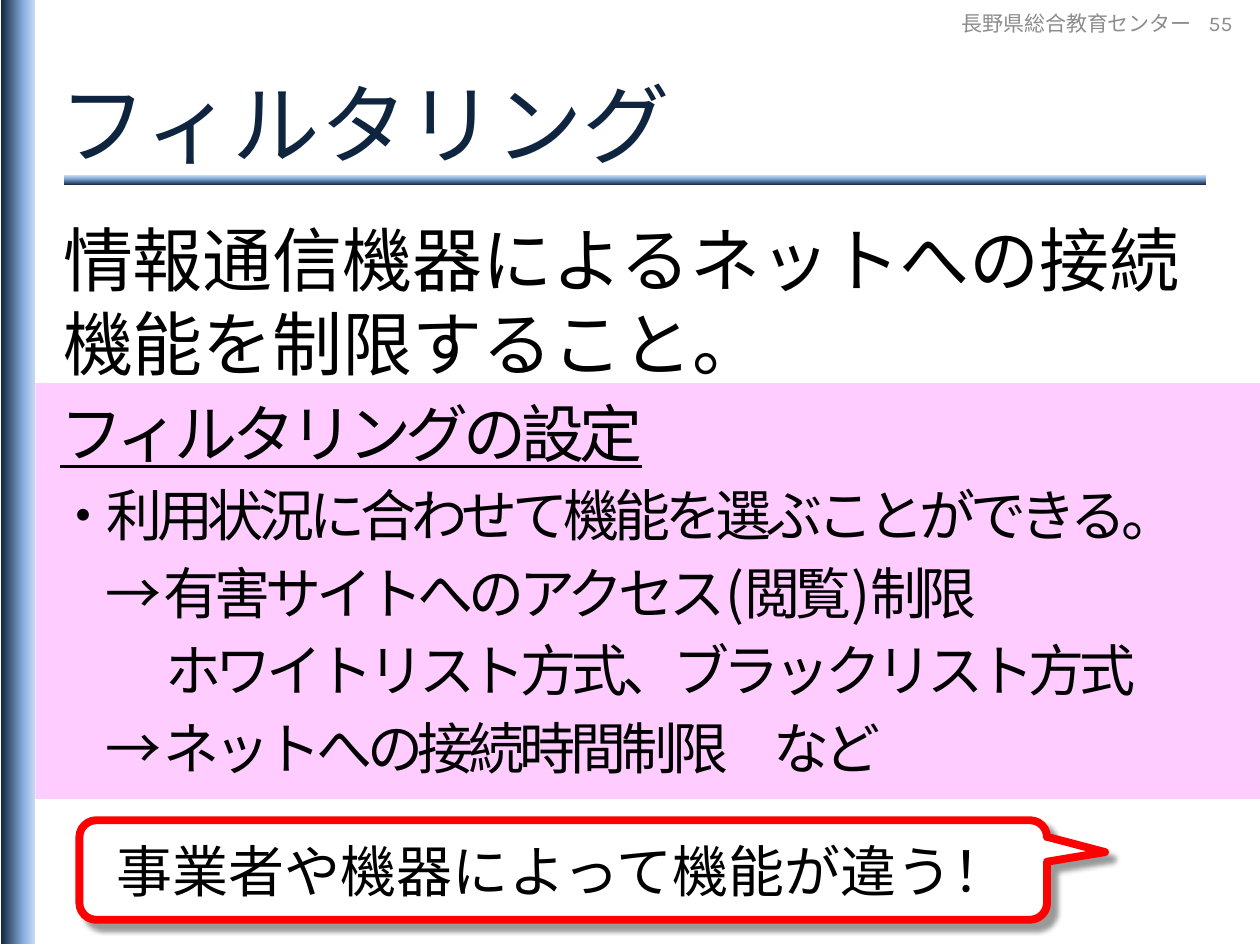
from lxml import etree
from pptx import Presentation
from pptx.dml.color import RGBColor
from pptx.enum.shapes import MSO_SHAPE
from pptx.enum.text import MSO_ANCHOR, MSO_AUTO_SIZE, PP_ALIGN
from pptx.oxml import parse_xml
from pptx.oxml.ns import qn
from pptx.util import Inches, Pt

RECT = MSO_SHAPE.RECTANGLE
CALLOUT = MSO_SHAPE.ROUNDED_RECTANGULAR_CALLOUT
TOP, MIDDLE, BOTTOM = MSO_ANCHOR.TOP, MSO_ANCHOR.MIDDLE, MSO_ANCHOR.BOTTOM
LEFT, CENTER, RIGHT = PP_ALIGN.LEFT, PP_ALIGN.CENTER, PP_ALIGN.RIGHT

NAVY = RGBColor(0x0F, 0x24, 0x3E)
GREY = RGBColor(0x8C, 0x8C, 0x8C)
BLACK = RGBColor(0, 0, 0)
WHITE = RGBColor(255, 255, 255)
PINK = RGBColor(0xFF, 0xCC, 0xFF)
RED = RGBColor(255, 0, 0)
NOTO = "Noto Sans CJK JP"
NS = 'xmlns:a="http://schemas.openxmlformats.org/drawingml/2006/main"'

TITLE = "フィルタリング"
HEADS = [
    ("55", (9.41, 0, 0.47, 0.36), RIGHT, 0.1),
    ("長野県総合教育センター", (7.52, 0, 2.05, 0.36), CENTER, 0),
]
INTRO = ["情報通信機器によるネットへの接続", "機能を制限すること。"]
POINTS = [
    ("フィルタリングの設定", 36, 0.2),
    ("・利用状況に合わせて機能を選ぶことができる。", 32, 0.16),
    ("→ 有害サイトへのアクセス(閲覧)制限", 32, 0.56),
    ("ホワイトリスト方式、ブラックリスト方式", 32, 1.03),
    ("→ ネットへの接続時間制限　など", 32, 0.56),
]
NOTE = "事業者や機器によって機能が違う！"
BARS = [((0.51, 1.39, 9.06, 0.08), 0), ((-3.61, 3.61, 7.5, 0.27), 90)]
STOPS = [(0, "0F243E"), (70, "8EB4E3"), (100, "C6D9F1")]


def place(shape, box):
    shape.left, shape.top, shape.width, shape.height = map(Inches, box)


def set_up(frame, anchor, left=0.1, top=0.05, right=0.1, bottom=0.05):
    frame.word_wrap = True
    frame.auto_size = MSO_AUTO_SIZE.NONE
    frame.vertical_anchor = anchor
    frame.margin_left, frame.margin_top = Inches(left), Inches(top)
    frame.margin_right, frame.margin_bottom = Inches(right), Inches(bottom)


def write(para, text, size, face, color, align=LEFT):
    para.text = text
    para.alignment = align
    run = para.runs[0]
    font = run.font
    font.size, font.name, font.color.rgb = Pt(size), face, color
    props = run._r.get_or_add_rPr()
    etree.SubElement(props, qn("a:ea")).set("typeface", face)
    return run


def add_box(shapes, kind, box, fill=None):
    shape = shapes.add_shape(kind, *map(Inches, box))
    shape.shadow.inherit = False
    shape.line.fill.background()
    if fill is not None:
        shape.fill.solid()
        shape.fill.fore_color.rgb = fill
    return shape


def fill_lines(frame, rows, size_gap):
    for i, (text, size, left) in enumerate(rows):
        para = frame.paragraphs[0] if i == 0 else frame.add_paragraph()
        write(para, text, size, NOTO, BLACK)
        para.line_spacing = Pt(size * 1.2)
        para.space_before = Pt(size_gap)
        para._p.get_or_add_pPr().set("marL", str(Inches(left)))
        para._p.get_or_add_pPr().set("indent", "0")


def main():
    deck = Presentation()
    deck.slide_width, deck.slide_height = Inches(10), Inches(7.5)
    slide = deck.slides.add_slide(deck.slide_layouts[5])
    shapes = slide.shapes

    for box, turn in BARS:
        bar = add_box(shapes, RECT, box)
        bar.rotation = turn
        stops = "".join(
            f'<a:gs pos="{pos * 1000}"><a:srgbClr val="{color}"/></a:gs>'
            for pos, color in STOPS
        )
        grad = parse_xml(
            f'<a:gradFill {NS} rotWithShape="1"><a:gsLst>{stops}</a:gsLst>'
            '<a:lin ang="16200000" scaled="0"/></a:gradFill>'
        )
        bar._element.spPr.find(qn("a:prstGeom")).addnext(grad)

    title = shapes.title
    place(title, (0.28, 0.6, 9.72, 0.79))
    set_up(title.text_frame, BOTTOM, 0.19, 0, 0, 0)
    write(title.text_frame.paragraphs[0], TITLE, 50, "Arial", NAVY)

    for text, box, align, side in HEADS:
        frame = shapes.add_textbox(*map(Inches, box)).text_frame
        set_up(frame, MIDDLE, left=side, right=side)
        write(frame.paragraphs[0], text, 12, "Karla", GREY, align)

    intro = shapes.add_textbox(*map(Inches, (0.28, 1.62, 9.72, 1.45))).text_frame
    set_up(intro, TOP, left=0, top=0.1)
    fill_lines(intro, [(text, 40, 0.22) for text in INTRO], 0)

    panel = add_box(shapes, RECT, (0.28, 3.04, 9.72, 3.3), PINK).text_frame
    set_up(panel, TOP, left=0, top=0.09)
    fill_lines(panel, POINTS, 6)
    for para in panel.paragraphs:
        para.runs[0]._r.get_or_add_rPr().set("spc", "-300")
    panel.paragraphs[0].runs[0].font.underline = True

    note = add_box(shapes, CALLOUT, (0.63, 6.51, 7.68, 0.79), WHITE)
    for i, value in enumerate((0.56, -0.18, 0.17)):
        note.adjustments[i] = value
    note.line.color.rgb = RED
    note.line.width = Pt(4.5)
    effect = note._element.spPr.find(qn("a:effectLst"))
    effect.append(parse_xml(
        f'<a:outerShdw {NS} blurRad="{Pt(3)}" dist="{Pt(5)}" dir="2700000" '
        'algn="tl" rotWithShape="0"><a:srgbClr val="000000">'
        '<a:alpha val="40000"/></a:srgbClr></a:outerShdw>'
    ))
    set_up(note.text_frame, MIDDLE)
    write(note.text_frame.paragraphs[0], NOTE, 32, NOTO, BLACK, CENTER)

    deck.save("out.pptx")


if __name__ == "__main__":
    main()
